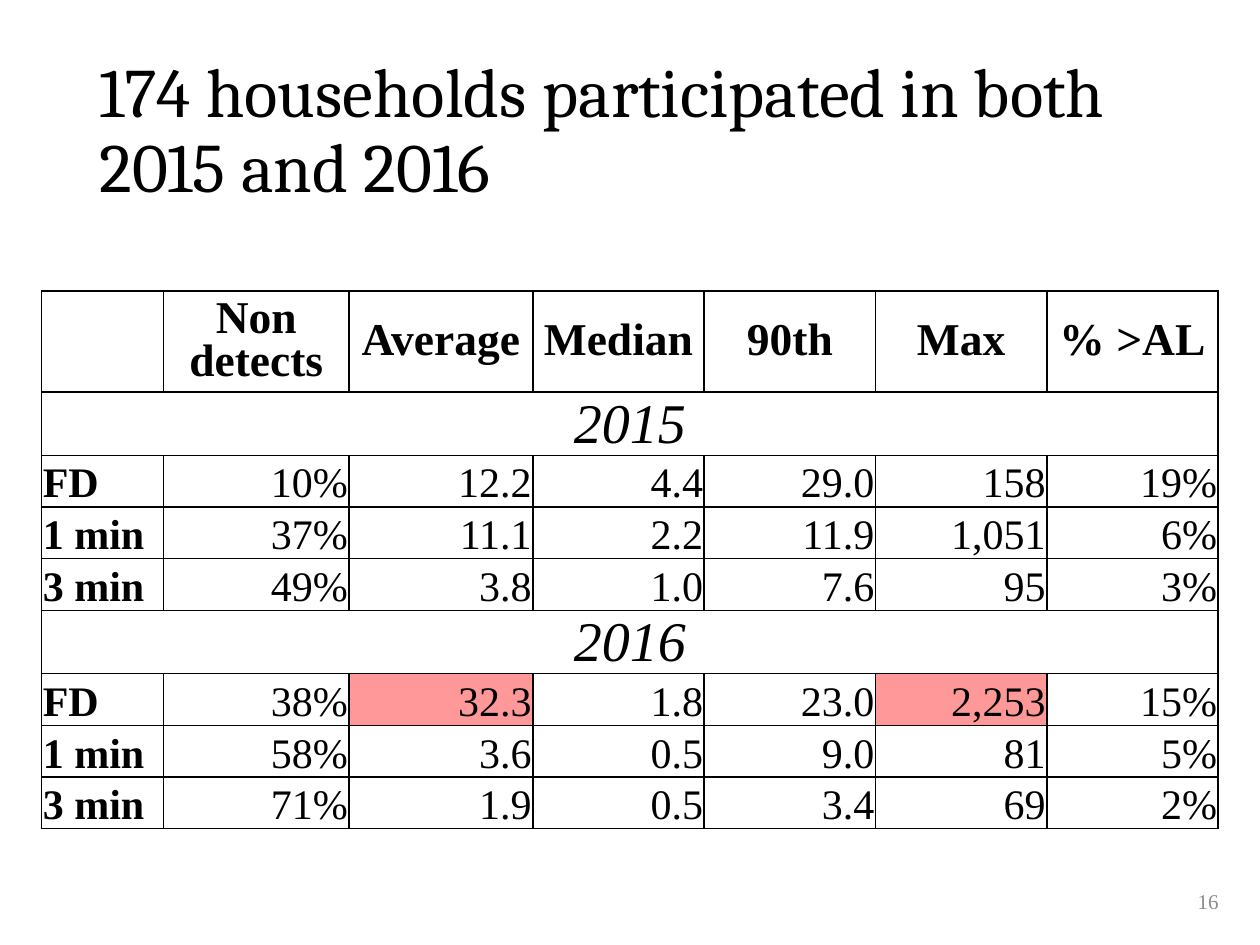
"""Build a slide with a table of household results for 2015 and 2016."""
from lxml.etree import SubElement
from pptx import Presentation
from pptx.dml.color import RGBColor
from pptx.enum.text import MSO_ANCHOR as Anchor, PP_ALIGN as Align
from pptx.oxml.ns import qn
from pptx.util import Inches, Pt

THEME = {
    "title_font": "Cambria", "body_font": "Times New Roman",
    "title": 39.6, "header": 26, "year": 32, "body": 24, "number": 12,
    "ink": "000000", "muted": "8C8C8C", "alert": "FF0000", "alert_alpha": 40000,
}
HEADERS = ["", "Non\ndetects", "Average", "Median", "90th", "Max", "% >AL"]
ROWS = [
    HEADERS,
    ["2015"],
    ["FD", "10%", "12.2", "4.4", "29.0", "158", "19%"],
    ["1 min", "37%", "11.1", "2.2", "11.9", "1,051", "6%"],
    ["3 min", "49%", "3.8", "1.0", "7.6", "95", "3%"],
    ["2016"],
    ["FD", "38%", "32.3", "1.8", "23.0", "2,253", "15%"],
    ["1 min", "58%", "3.6", "0.5", "9.0", "81", "5%"],
    ["3 min", "71%", "1.9", "0.5", "3.4", "69", "2%"],
]
HIGHLIGHTS = {(6, 2), (6, 5)}
COLUMN_WIDTHS = [0.97, 1.47, 1.46] + [1.36] * 4
HEADER_HEIGHT, YEAR_HEIGHT, BODY_HEIGHT = 0.8, 0.5, 0.41


def write(frame, text, size, align, font=THEME["body_font"], color=THEME["ink"],
          bold=False, italic=False, spacing=1.0):
    for index, line in enumerate(text.split("\n")):
        paragraph = frame.add_paragraph() if index else frame.paragraphs[0]
        paragraph.alignment = align
        paragraph.line_spacing = spacing
        run = paragraph.add_run()
        run.text = line
        run.font.name, run.font.size = font, Pt(size)
        run.font.bold, run.font.italic = bold, italic
        run.font.color.rgb = RGBColor.from_string(color)


def style_cell(cell, highlighted):
    cell.margin_left = cell.margin_right = cell.margin_top = Inches(0.01)
    cell.margin_bottom = 0
    properties = cell._tc.get_or_add_tcPr()
    for side in ("lnL", "lnR", "lnT", "lnB"):
        border = SubElement(properties, qn(f"a:{side}"), w=str(Pt(1)))
        fill = SubElement(border, qn("a:solidFill"))
        SubElement(fill, qn("a:srgbClr"), val=THEME["ink"])
    if highlighted:
        cell.fill.solid()
        cell.fill.fore_color.rgb = RGBColor.from_string(THEME["alert"])
        color = properties.find(qn("a:solidFill")).find(qn("a:srgbClr"))
        SubElement(color, qn("a:alpha"), val=str(THEME["alert_alpha"]))
    else:
        cell.fill.background()


presentation = Presentation()
presentation.slide_width, presentation.slide_height = Inches(10), Inches(7.5)
slide = presentation.slides.add_slide(presentation.slide_layouts[6])

heights = [HEADER_HEIGHT] + [YEAR_HEIGHT if len(row) == 1 else BODY_HEIGHT for row in ROWS[1:]]
table = slide.shapes.add_table(
    len(ROWS), len(HEADERS), Inches(0.33), Inches(2.31),
    Inches(sum(COLUMN_WIDTHS)), Inches(sum(heights))).table
table.first_row = table.horz_banding = False
for column, width in zip(table.columns, COLUMN_WIDTHS):
    column.width = Inches(width)

for row_index, (values, height) in enumerate(zip(ROWS, heights)):
    table.rows[row_index].height = Inches(height)
    for column_index in range(len(HEADERS)):
        style_cell(table.cell(row_index, column_index), (row_index, column_index) in HIGHLIGHTS)
    if len(values) == 1:
        table.cell(row_index, 0).merge(table.cell(row_index, len(HEADERS) - 1))
    for column_index, value in enumerate(values):
        cell = table.cell(row_index, column_index)
        cell.vertical_anchor = Anchor.BOTTOM if row_index else Anchor.MIDDLE
        if not value:
            continue
        if row_index == 0:
            write(cell.text_frame, value, THEME["header"], Align.CENTER, bold=True, spacing=0.86)
        elif len(values) == 1:
            write(cell.text_frame, value, THEME["year"], Align.CENTER, italic=True)
        else:
            is_label = column_index == 0
            write(cell.text_frame, value, THEME["body"],
                  Align.LEFT if is_label else Align.RIGHT, bold=is_label)

title = slide.shapes.add_textbox(Inches(0.69), Inches(0.4), Inches(8.62), Inches(1.3))
number = slide.shapes.add_textbox(Inches(7.06), Inches(6.95), Inches(2.71), Inches(0.4))
for box in (title, number):
    box.text_frame.word_wrap = True
    box.text_frame.vertical_anchor = Anchor.MIDDLE
write(title.text_frame, "174 households participated in both 2015 and 2016", THEME["title"],
      Align.LEFT, font=THEME["title_font"], spacing=0.9)
write(number.text_frame, "16", THEME["number"], Align.RIGHT, color=THEME["muted"])

presentation.save("out.pptx")
